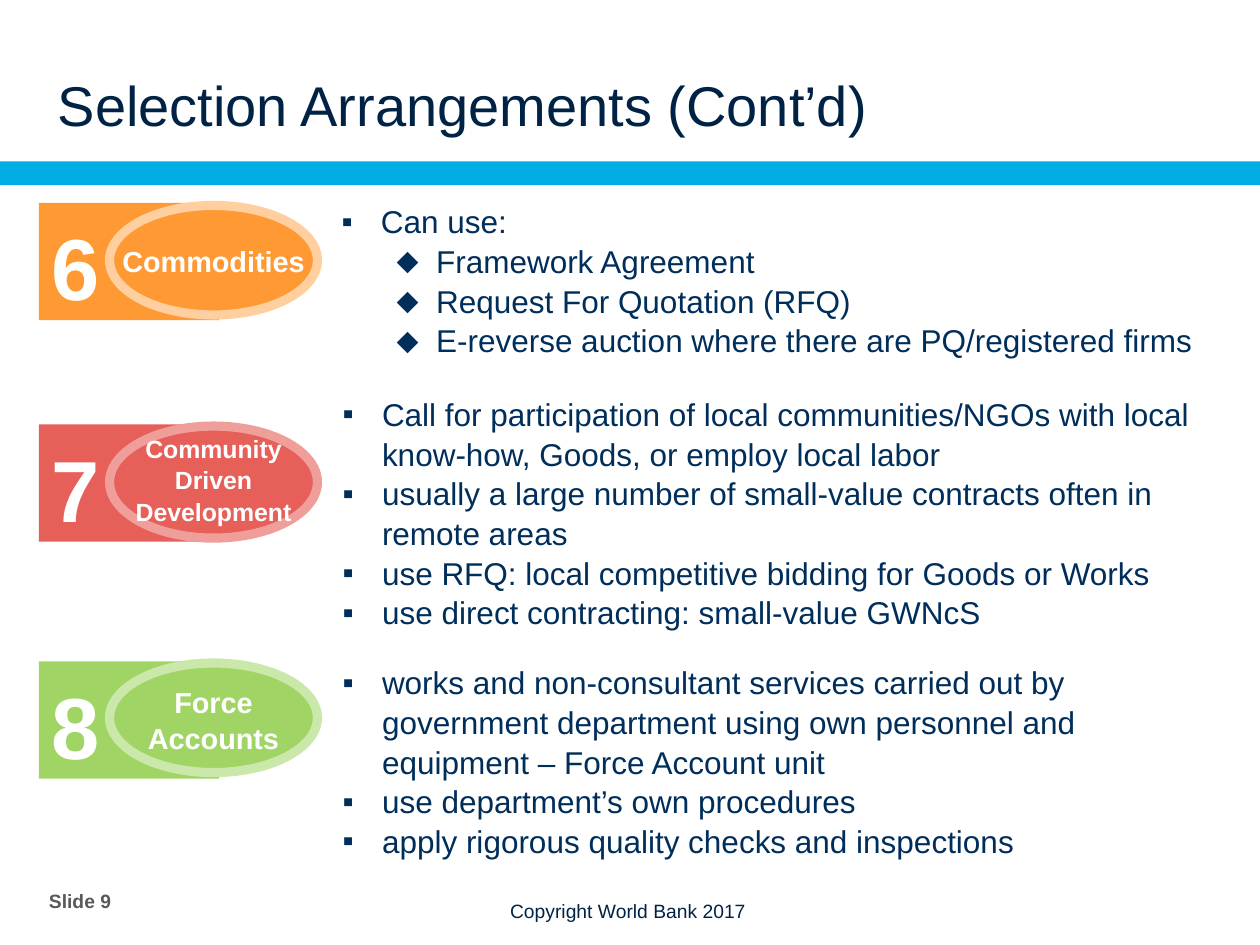
from lxml import etree
from pptx import Presentation
from pptx.dml.color import RGBColor
from pptx.enum import shapes, text
from pptx.oxml import ns
from pptx.util import Pt

NAVY = "002E5B"
DARK = "002345"
WHITE = "FFFFFF"
LINE_SPACING = 1.05
BULLETS = ((22.5, "▪"), (54, "⬥"))

SECTIONS = (
    dict(number="6", label="Commodities", label_size=16.5, fill="FF9933", ring="FFCF9F",
         banner_top=116, oval=(117.4, 62.6), label_box=(134.6, 27.4),
         list_box=(188, 111, 506, 94),
         points=((0, "Can use:"),
                 (1, "Framework Agreement"),
                 (1, "Request For Quotation (RFQ)"),
                 (1, "E-reverse auction where there are PQ/registered firms"))),
    dict(number="7", label="Community Driven Development", label_size=14.2,
         fill="E65F59", ring="F09E9A",
         banner_top=242.6, oval=(243.5, 64), label_box=(243.4, 59),
         list_box=(188.6, 221, 502, 138),
         points=((0, "Call for participation of local communities/NGOs with local "
                     "know-how, Goods, or employ local labor"),
                 (0, "usually a large number of small-value contracts often in remote areas"),
                 (0, "use RFQ: local competitive bidding for Goods or Works"),
                 (0, "use direct contracting: small-value GWNcS"))),
    dict(number="8", label="Force Accounts", label_size=16.5, fill="A0D565", ring="CAE8AA",
         banner_top=378, oval=(378.9, 62.6), label_box=(386.6, 47.5),
         list_box=(188.6, 374.4, 495, 117),
         points=((0, "works and non-consultant services carried out by government "
                     "department using own personnel and equipment – Force Account unit"),
                 (0, "use department’s own procedures"),
                 (0, "apply rigorous quality checks and inspections"))),
)


def color(value):
    return RGBColor.from_string(value)


def place(item, left, top, width, height):
    item.left, item.top = Pt(left), Pt(top)
    item.width, item.height = Pt(width), Pt(height)


def set_frame(frame, anchor=text.MSO_ANCHOR.TOP, inset=None, wrap=True):
    frame.auto_size = text.MSO_AUTO_SIZE.NONE
    frame.word_wrap = wrap
    frame.vertical_anchor = anchor
    if inset is not None:
        frame.margin_left = frame.margin_right = Pt(inset)
        frame.margin_top = frame.margin_bottom = Pt(inset)


def style(paragraph, size, value, bold=False, align=text.PP_ALIGN.LEFT, spacing=1.0):
    paragraph.alignment = align
    paragraph.line_spacing = spacing
    paragraph.space_before = Pt(0)
    font = paragraph.font
    font.name, font.size, font.bold = "Arial", Pt(size), bold
    font.color.rgb = color(value)


def add_bullet(paragraph, level):
    indent, mark = BULLETS[level]
    paragraph.level = level
    properties = paragraph._p.get_or_add_pPr()
    properties.set("marL", str(Pt(indent)))
    properties.set("indent", str(-Pt(BULLETS[0][0])))
    etree.SubElement(properties, ns.qn("a:buFont")).set("typeface", "Arial")
    etree.SubElement(properties, ns.qn("a:buChar")).set("char", mark)


def add_panel(slide, kind, box, fill, ring=None):
    panel = slide.shapes.add_shape(kind, *map(Pt, box))
    panel.shadow.inherit = False
    panel.fill.solid()
    panel.fill.fore_color.rgb = color(fill)
    if ring:
        panel.line.color.rgb = color(ring)
        panel.line.width = Pt(5.25)
    else:
        panel.line.fill.background()
    return panel


def add_caption(slide, box, words, frame_options, **look):
    frame = slide.shapes.add_textbox(*map(Pt, box)).text_frame
    set_frame(frame, **frame_options)
    frame.text = words
    style(frame.paragraphs[0], **look)


def add_badge(slide, section):
    banner = add_panel(slide, shapes.MSO_SHAPE.RECTANGLE,
                       (22.3, section["banner_top"], 103, 67), section["fill"])
    set_frame(banner.text_frame)
    banner.text_frame.text = section["number"]
    style(banner.text_frame.paragraphs[0], 49.5, WHITE, bold=True, spacing=LINE_SPACING)

    top, height = section["oval"]
    add_panel(slide, shapes.MSO_SHAPE.OVAL, (62.6, top, 118.8, height),
              section["fill"], section["ring"])

    top, height = section["label_box"]
    add_caption(slide, (59, top, 126, height), section["label"], {},
                size=section["label_size"], value=WHITE, bold=True,
                align=text.PP_ALIGN.CENTER, spacing=LINE_SPACING)


def fill_list(body, section):
    place(body, *section["list_box"])
    frame = body.text_frame
    set_frame(frame)
    frame.text = "\n".join(words for _, words in section["points"])
    for paragraph, (level, _) in zip(frame.paragraphs, section["points"]):
        add_bullet(paragraph, level)
        style(paragraph, 18, NAVY, spacing=LINE_SPACING)


def fill_title(title, words):
    place(title, 33, 19, 666, 60)
    set_frame(title.text_frame, text.MSO_ANCHOR.BOTTOM, inset=0)
    title.text_frame.text = words
    style(title.text_frame.paragraphs[0], 32, DARK)


def main():
    deck = Presentation()
    deck.slide_width, deck.slide_height = Pt(720), Pt(540)
    slide = deck.slides.add_slide(deck.slide_layouts.get_by_name("Comparison"))
    title, *bodies = slide.placeholders

    fill_title(title, "Selection Arrangements (Cont’d)")
    add_panel(slide, shapes.MSO_SHAPE.RECTANGLE, (0, 92.2, 720, 13.6), "00ADE4")
    for section, body in zip(SECTIONS, bodies):
        add_badge(slide, section)
        fill_list(body, section)
    for spare in bodies[len(SECTIONS):]:
        spare.element.getparent().remove(spare.element)

    add_caption(slide, (284.4, 510.5, 153.4, 21), "Copyright World Bank 2017",
                dict(wrap=False), size=11, value=DARK)
    add_caption(slide, (28, 500.4, 50, 28.8), "Slide 9",
                dict(anchor=text.MSO_ANCHOR.MIDDLE, inset=0),
                size=11, value="595959", bold=True)
    deck.save("out.pptx")


if __name__ == "__main__":
    main()
